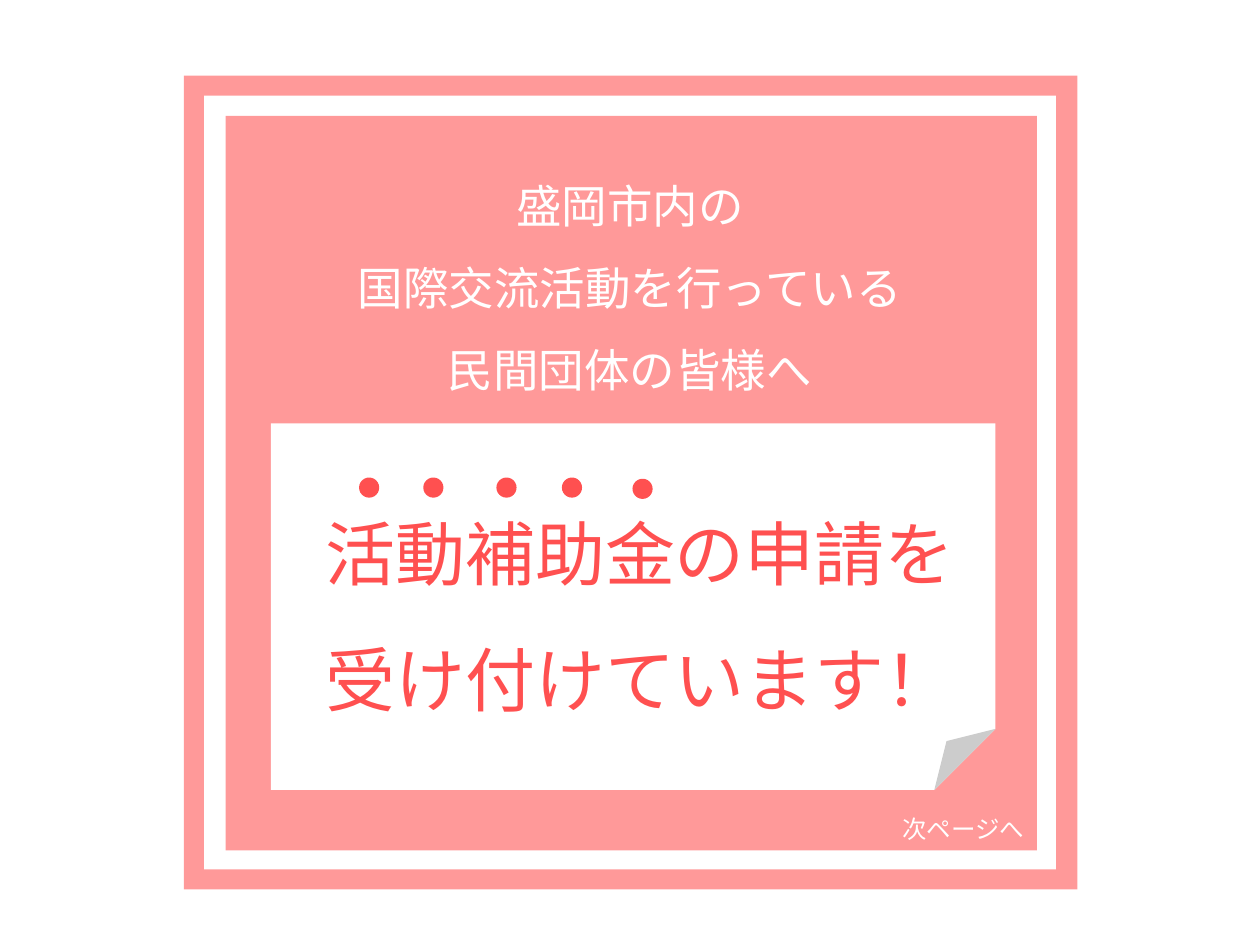
"""Build the grant announcement slide with a framed notice and a folded sheet."""
from dataclasses import dataclass

from lxml.etree import SubElement
from pptx import Presentation
from pptx.dml.color import RGBColor
from pptx.enum.shapes import MSO_SHAPE as Shape
from pptx.enum.text import MSO_ANCHOR as Anchor, MSO_AUTO_SIZE as AutoSize, PP_ALIGN as Align
from pptx.oxml.ns import qn
from pptx.util import Inches, Pt


@dataclass(frozen=True)
class Theme:
    font: str = "Noto Sans CJK JP"
    pink: str = "FF9999"
    white: str = "FFFFFF"
    red: str = "FF5050"
    greeting_size: int = 26
    message_size: int = 40
    next_size: int = 14


THEME = Theme()

GREETING = ["盛岡市内の", "国際交流活動を行っている", "民間団体の皆様へ"]
MESSAGE = ["活動補助金の申請を", "受け付けています！"]
NEXT_PAGE = ["次ページへ"]

FRAMES = [
    ((1.46, 0.6, 7.09, 6.46), THEME.pink),
    ((1.62, 0.76, 6.76, 6.14), THEME.white),
    ((1.79, 0.92, 6.44, 5.83), THEME.pink),
]
GREETING_AREA = (1.93, 1.15, 6.14, 2.07)
SHEET_AREA = (2.15, 3.36, 5.75, 2.91)
MESSAGE_AREA = (2.48, 3.67, 5.2, 2.12)
NEXT_AREA = (6.97, 6.41, 1.26, 0.34)

DOT_SIZE = 0.16
DOTS = [(2.85, 3.79), (3.36, 3.79), (3.94, 3.79), (4.46, 3.79), (5.02, 3.8)]


def lengths(area):
    return [Inches(value) for value in area]


def add_filled(slide, preset, area, color):
    part = slide.shapes.add_shape(preset, *lengths(area))
    part.shadow.inherit = False
    part.fill.solid()
    part.fill.fore_color.rgb = RGBColor.from_string(color)
    part.line.fill.background()


def write(holder, lines, *, size, color, align=Align.CENTER, spacing=1.0):
    frame = holder.text_frame
    frame.word_wrap = True
    frame.auto_size = AutoSize.SHAPE_TO_FIT_TEXT
    frame.vertical_anchor = Anchor.TOP
    frame.margin_left = frame.margin_right = Inches(0.1 if align == Align.RIGHT else 0.05)
    for index, line in enumerate(lines):
        paragraph = frame.add_paragraph() if index else frame.paragraphs[0]
        paragraph.alignment = align
        paragraph.line_spacing = spacing
        run = paragraph.add_run()
        run.text = line
        run.font.size = Pt(size)
        run.font.name = THEME.font
        run.font.color.rgb = RGBColor.from_string(color)
        east_asian = SubElement(run.font._element, qn("a:ea"))
        east_asian.set("typeface", THEME.font)


def place_title(slide, area):
    title = slide.shapes.title
    title.left, title.top, title.width, title.height = lengths(area)
    title.element.getparent().append(title.element)
    return title


def main():
    deck = Presentation()
    deck.slide_width, deck.slide_height = Inches(10), Inches(7.5)
    slide = deck.slides.add_slide(deck.slide_layouts.get_by_name("Title Only"))

    for area, color in FRAMES:
        add_filled(slide, Shape.RECTANGLE, area, color)
    greeting = slide.shapes.add_textbox(*lengths(GREETING_AREA))
    write(greeting, GREETING, size=THEME.greeting_size, color=THEME.white, spacing=1.5)

    add_filled(slide, Shape.FOLDED_CORNER, SHEET_AREA, THEME.white)
    message = place_title(slide, MESSAGE_AREA)
    write(message, MESSAGE, size=THEME.message_size, color=THEME.red, spacing=1.5)

    next_page = slide.shapes.add_textbox(*lengths(NEXT_AREA))
    write(next_page, NEXT_PAGE, size=THEME.next_size, color=THEME.white, align=Align.RIGHT)

    for left, top in DOTS:
        add_filled(slide, Shape.OVAL, (left, top, DOT_SIZE, DOT_SIZE), THEME.red)

    deck.save("out.pptx")


if __name__ == "__main__":
    main()
